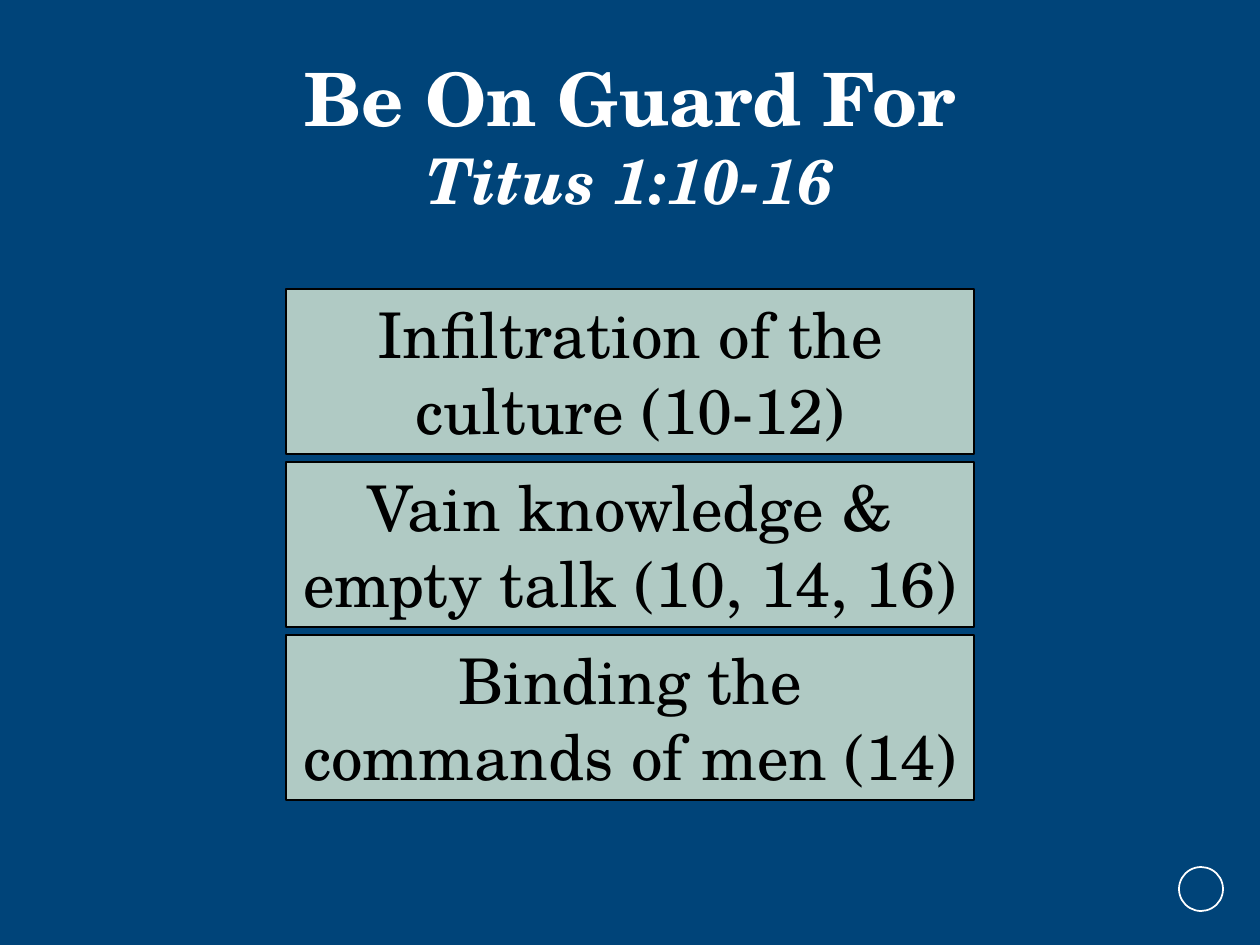
from pptx import Presentation, util as u
from pptx.dml.color import RGBColor
from pptx.enum import shapes, text

TITLE = [("Be On Guard For", 42, False), ("Titus 1:10-16", 36, True)]
WARNINGS = [
    "Infiltration of the culture (10-12)",
    "Vain knowledge & empty talk (10, 14, 16)",
    "Binding the commands of men (14)",
]
COLORS = {"background": "004479", "box": "B0CAC4", "white": "FFFFFF", "black": "000000"}
FONT = "TeX Gyre Schola"
SCALE = 914400 / 126  # EMU per px
SLIDE_WIDTH, SLIDE_HEIGHT = 1260, 945
BOX_WIDTH, BOX_HEIGHT, BOX_TOP, BOX_STEP = 688, 165, 289, 173


def px(*lengths):
    return [u.Emu(round(length * SCALE)) for length in lengths]


def color(name):
    return RGBColor.from_string(COLORS[name])


def add_run(paragraph, words, size, color_name, bold=False, italic=False):
    run = paragraph.add_run()
    run.text = words
    font = run.font
    font.name, font.size, font.bold, font.italic = FONT, u.Pt(size), bold, italic
    font.color.rgb = color(color_name)


def centered_paragraph(shape):
    frame = shape.text_frame
    frame.word_wrap = True
    frame.vertical_anchor = text.MSO_ANCHOR.MIDDLE
    paragraph = frame.paragraphs[0]
    paragraph.alignment = text.PP_ALIGN.CENTER
    return paragraph


def add_outlined(kind, box, line, fill=None):
    shape = slide.shapes.add_shape(kind, *px(*box))
    shape.shadow.inherit = False
    shape.line.color.rgb = color(line)
    shape.line.width = u.Pt(1)
    if fill:
        shape.fill.solid()
        shape.fill.fore_color.rgb = color(fill)
    else:
        shape.fill.background()
    return shape


presentation = Presentation()
presentation.slide_width, presentation.slide_height = px(SLIDE_WIDTH, SLIDE_HEIGHT)
slide = presentation.slides.add_slide(presentation.slide_layouts[6])
slide.background.fill.solid()
slide.background.fill.fore_color.rgb = color("background")

# Corner ring
add_outlined(shapes.MSO_SHAPE.OVAL, (1179, 867, 44, 44), "white")

# Title and reference
title = centered_paragraph(slide.shapes.add_textbox(*px(94, 44, 1072, 182)))
for index, (words, size, italic) in enumerate(TITLE):
    if index:
        title.add_line_break()
    add_run(title, words, size, "white", bold=True, italic=italic)

# Stack of warnings
left = (SLIDE_WIDTH - BOX_WIDTH) // 2
for index, warning in enumerate(WARNINGS):
    box = (left, BOX_TOP + index * BOX_STEP, BOX_WIDTH, BOX_HEIGHT)
    shape = add_outlined(shapes.MSO_SHAPE.RECTANGLE, box, "black", "box")
    add_run(centered_paragraph(shape), warning, 36, "black")
    shape.text_frame.auto_size = text.MSO_AUTO_SIZE.SHAPE_TO_FIT_TEXT

presentation.save("out.pptx")
